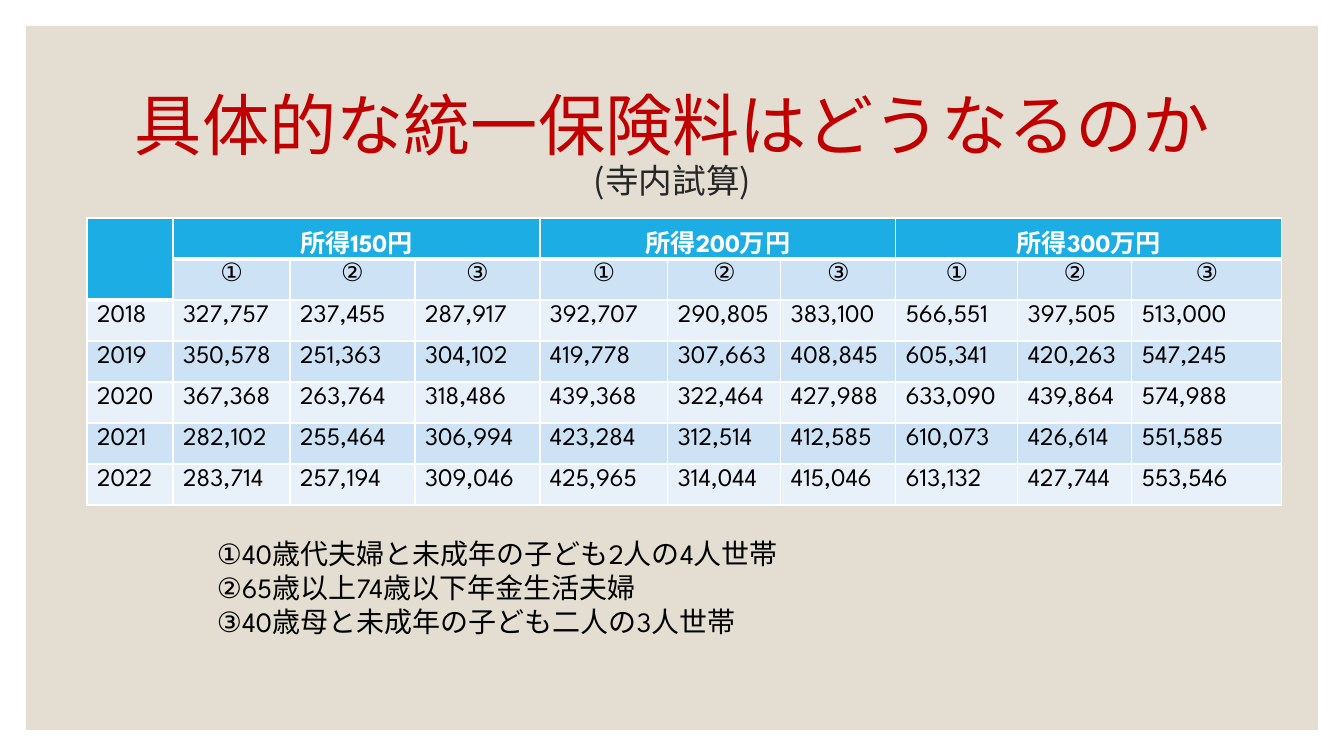
from dataclasses import dataclass

from lxml.etree import SubElement
from pptx import Presentation
from pptx.dml.color import RGBColor
from pptx.enum.shapes import MSO_SHAPE as Shape
from pptx.enum.text import MSO_ANCHOR as Anchor, MSO_AUTO_SIZE as AutoSize, PP_ALIGN as Align
from pptx.oxml.ns import qn
from pptx.util import Emu, Pt

EMU_PER_PX = 914400 / 100.8
JAPANESE_FONT = "Noto Sans CJK JP"
LATIN_FONT = "League Spartan"
WHITE, BLACK, HEADER_BLUE = "FFFFFF", "000000", "1CADE4"
BAND_FILLS = ("CDE3F5", "E8F1FA")


@dataclass(frozen=True)
class Box:
    left: int
    top: int
    width: int
    height: int


@dataclass(frozen=True)
class TextStyle:
    size: int
    color: str
    font: str = LATIN_FONT
    bold: bool = False


@dataclass(frozen=True)
class IncomeGroup:
    heading: str
    first_column: int


@dataclass(frozen=True)
class YearPremiums:
    year: str
    premiums: str


HEADING_STYLE = TextStyle(18, WHITE, bold=True)
CELL_STYLE = TextStyle(18, BLACK)
NOTE_STYLE = TextStyle(20, BLACK)
TITLE_LINES = (
    ("具体的な統一保険料はどうなるのか", TextStyle(48, "C00000", JAPANESE_FONT)),
    ("(寺内試算)", TextStyle(24, "262626", JAPANESE_FONT)),
)
HOUSEHOLD_MARKS = ("①", "②", "③")
HOUSEHOLD_NOTES = (
    "①40歳代夫婦と未成年の子ども2人の4人世帯",
    "②65歳以上74歳以下年金生活夫婦",
    "③40歳母と未成年の子ども二人の3人世帯",
)
INCOME_GROUPS = (
    IncomeGroup("所得150円", 1),
    IncomeGroup("所得200万円", 4),
    IncomeGroup("所得300万円", 7),
)
YEARS = (
    YearPremiums("2018", "327,757 237,455 287,917 392,707 290,805 383,100 566,551 397,505 513,000"),
    YearPremiums("2019", "350,578 251,363 304,102 419,778 307,663 408,845 605,341 420,263 547,245"),
    YearPremiums("2020", "367,368 263,764 318,486 439,368 322,464 427,988 633,090 439,864 574,988"),
    YearPremiums("2021", "282,102 255,464 306,994 423,284 312,514 412,585 610,073 426,614 551,585"),
    YearPremiums("2022", "283,714 257,194 309,046 425,965 314,044 415,046 613,132 427,744 553,546"),
)
COLUMN_WIDTHS = (86, 117, 125, 125, 128, 113, 115, 122, 114, 150)
ROW_HEIGHT = 41


def px(length: int) -> Emu:
    """Turn px into EMU."""
    return Emu(round(length * EMU_PER_PX))


def place(box: Box) -> tuple:
    """Return left, top, width and height in EMU."""
    return px(box.left), px(box.top), px(box.width), px(box.height)


def paint(fill, color: str) -> None:
    """Give a fill one solid colour."""
    fill.solid()
    fill.fore_color.rgb = RGBColor.from_string(color)


def add_run(paragraph, text: str, style: TextStyle) -> None:
    """Append one styled run to a paragraph."""
    run = paragraph.add_run()
    run.text = text
    run.font.size = Pt(style.size)
    run.font.bold = style.bold
    paint(run.font.fill, style.color)
    run.font.name = style.font
    SubElement(run.font._element, qn("a:ea"), typeface=JAPANESE_FONT)


def add_panel(slide, box: Box) -> None:
    """Draw the beige panel behind the content."""
    panel = slide.shapes.add_shape(Shape.RECTANGLE, *place(box))
    panel.shadow.inherit = False
    paint(panel.fill, "E3DED1")
    panel.line.fill.background()


def add_title(slide, box: Box) -> None:
    """Write the title and its subtitle as one centred paragraph."""
    frame = slide.shapes.add_textbox(*place(box)).text_frame
    frame.word_wrap = True
    frame.vertical_anchor = Anchor.MIDDLE
    paragraph = frame.paragraphs[0]
    paragraph.alignment = Align.CENTER
    paragraph.line_spacing = 0.9
    for index, (text, style) in enumerate(TITLE_LINES):
        if index:
            paragraph.add_line_break()
        add_run(paragraph, text, style)


def add_borders(cell, top: int, bottom: int) -> None:
    """Give a cell white borders, with widths in points above and below."""
    properties = cell._tc.get_or_add_tcPr()
    for side, width in (("L", 1), ("R", 1), ("T", top), ("B", bottom)):
        border = SubElement(properties, qn(f"a:ln{side}"), w=str(Pt(width)))
        color = SubElement(border, qn("a:solidFill"))
        SubElement(color, qn("a:srgbClr"), val=WHITE)


def write_cell(cell, text: str, style: TextStyle, align: Align = Align.LEFT) -> None:
    """Write one line into a table cell."""
    paragraph = cell.text_frame.paragraphs[0]
    paragraph.alignment = align
    add_run(paragraph, text, style)


def add_premium_table(slide, left: int, top: int) -> None:
    """Build the table of premiums by year, income and household."""
    row_count = len(YEARS) + 2
    box = Box(left, top, sum(COLUMN_WIDTHS), ROW_HEIGHT * row_count)
    table = slide.shapes.add_table(row_count, len(COLUMN_WIDTHS), *place(box)).table
    for column, width in zip(table.columns, COLUMN_WIDTHS):
        column.width = px(width)
    for row_index, row in enumerate(table.rows):
        row.height = px(ROW_HEIGHT)
        for column_index, cell in enumerate(row.cells):
            last_header_row = 0 if column_index else 1
            add_borders(
                cell,
                top=3 if row_index == last_header_row + 1 else 1,
                bottom=3 if row_index <= last_header_row else 1,
            )
            is_header = row_index <= last_header_row
            paint(cell.fill, HEADER_BLUE if is_header else BAND_FILLS[(row_index - 1) % 2])

    table.cell(0, 0).merge(table.cell(1, 0))
    for group in INCOME_GROUPS:
        heading = table.cell(0, group.first_column)
        heading.merge(table.cell(0, group.first_column + len(HOUSEHOLD_MARKS) - 1))
        write_cell(heading, group.heading, HEADING_STYLE, Align.CENTER)
        for column_index, mark in enumerate(HOUSEHOLD_MARKS, group.first_column):
            write_cell(table.cell(1, column_index), mark, CELL_STYLE, Align.CENTER)
    for row_index, entry in enumerate(YEARS, 2):
        for column_index, value in enumerate((entry.year, *entry.premiums.split())):
            write_cell(table.cell(row_index, column_index), value, CELL_STYLE)


def add_household_notes(slide, box: Box) -> None:
    """Explain the three household types below the table."""
    frame = slide.shapes.add_textbox(*place(box)).text_frame
    frame.word_wrap = True
    frame.auto_size = AutoSize.SHAPE_TO_FIT_TEXT
    for index, note in enumerate(HOUSEHOLD_NOTES):
        paragraph = frame.add_paragraph() if index else frame.paragraphs[0]
        add_run(paragraph, note, NOTE_STYLE)


def main() -> None:
    """Build and save the slide."""
    deck = Presentation()
    deck.slide_width, deck.slide_height = px(1344), px(756)
    slide = deck.slides.add_slide(deck.slide_layouts[6])
    paint(slide.background.fill, WHITE)
    add_panel(slide, Box(26, 26, 1292, 704))
    add_title(slide, Box(118, 71, 1109, 151))
    add_premium_table(slide, 87, 218)
    add_household_notes(slide, Box(207, 532, 1119, 112))
    deck.save("out.pptx")


if __name__ == "__main__":
    main()
